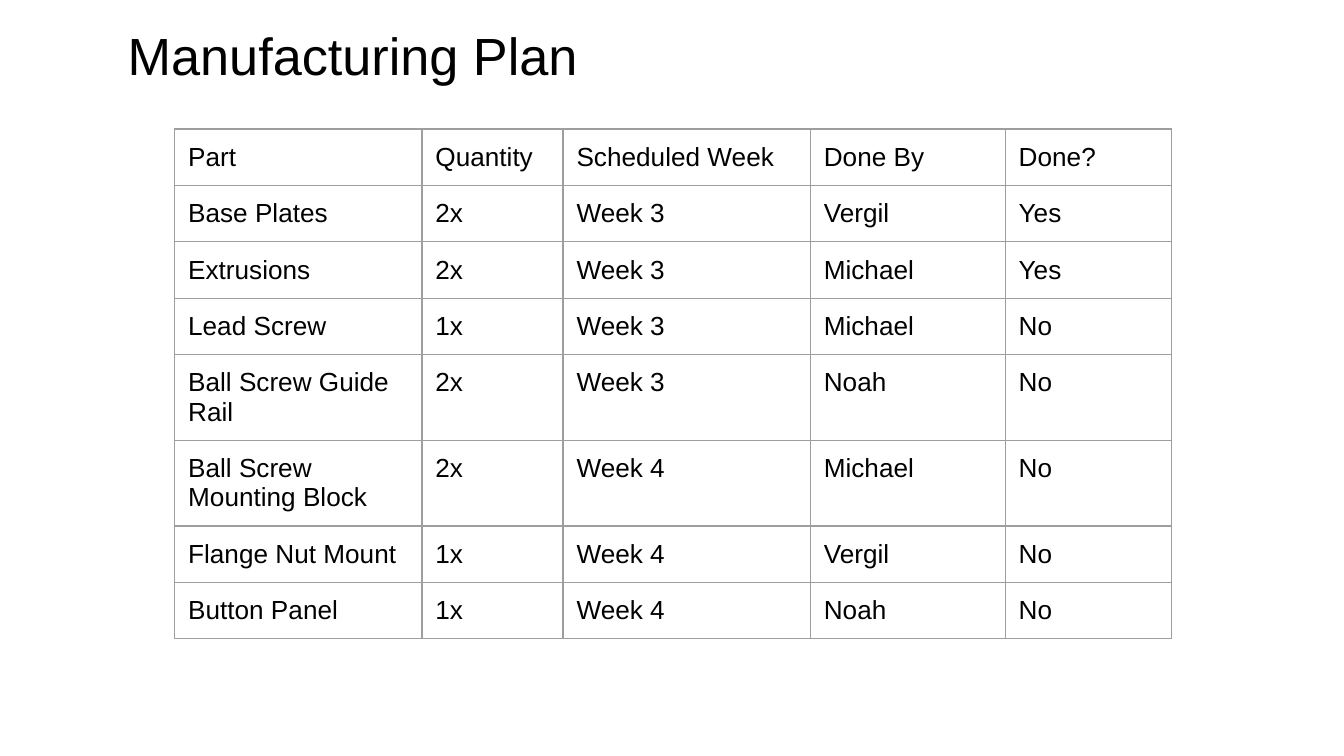
"""Build the manufacturing plan slide with its parts schedule table."""
from typing import NamedTuple

from lxml import etree
from pptx import Presentation
from pptx.dml.color import RGBColor
from pptx.enum.text import MSO_ANCHOR, PP_ALIGN
from pptx.oxml.ns import qn
from pptx.util import Inches, Pt

TOP = MSO_ANCHOR.TOP
LEFT = PP_ALIGN.LEFT
BLACK = RGBColor(0x00, 0x00, 0x00)
GRAY = RGBColor(0x9E, 0x9E, 0x9E)
FONT = "Arial"
SLIDE_WIDTH = Inches(10)
SLIDE_HEIGHT = SLIDE_WIDTH * 9 // 16
INSET = Inches(0.1)
ROW_HEIGHT = Inches(0.42)
COLUMN_WIDTHS = [Inches(width) for width in (1.84, 1.05, 1.84, 1.45, 1.24)]


class PlanRow(NamedTuple):
    part: str
    quantity: str
    week: str
    done_by: str
    done: str


PLAN = [
    PlanRow("Part", "Quantity", "Scheduled Week", "Done By", "Done?"),
    PlanRow("Base Plates", "2x", "Week 3", "Vergil", "Yes"),
    PlanRow("Extrusions", "2x", "Week 3", "Michael", "Yes"),
    PlanRow("Lead Screw", "1x", "Week 3", "Michael", "No"),
    PlanRow("Ball Screw Guide Rail", "2x", "Week 3", "Noah", "No"),
    PlanRow("Ball Screw Mounting Block", "2x", "Week 4", "Michael", "No"),
    PlanRow("Flange Nut Mount", "1x", "Week 4", "Vergil", "No"),
    PlanRow("Button Panel", "1x", "Week 4", "Noah", "No"),
]


def write(frame, text: str, size: int) -> None:
    para = frame.paragraphs[0]
    para.alignment = LEFT
    span = para.add_run()
    span.text = text
    span.font.size = Pt(size)
    span.font.name = FONT
    span.font.bold = False
    span.font.color.rgb = BLACK


def set_insets(box) -> None:
    box.margin_left = box.margin_right = INSET
    box.margin_top = box.margin_bottom = INSET
    box.vertical_anchor = TOP


def add_borders(cell) -> None:
    properties = cell._tc.get_or_add_tcPr()
    for position, side in enumerate(("lnL", "lnR", "lnT", "lnB")):
        line = etree.Element(qn(f"a:{side}"), w=str(Pt(0.75)))
        fill = etree.SubElement(line, qn("a:solidFill"))
        etree.SubElement(fill, qn("a:srgbClr"), val=str(GRAY))
        properties.insert(position, line)


def add_title(page, text: str) -> None:
    title = page.shapes.title
    title.left, title.top = Inches(0.85), Inches(0.07)
    title.width, title.height = Inches(8.3), Inches(0.67)
    set_insets(title.text_frame)
    title.text_frame.word_wrap = True
    write(title.text_frame, text, 28)


def add_plan_table(page, plan: list[PlanRow]) -> None:
    frame = page.shapes.add_table(
        len(plan), len(COLUMN_WIDTHS), Inches(1.3), Inches(0.96),
        sum(COLUMN_WIDTHS), ROW_HEIGHT * len(plan))
    table = frame.table
    table.first_row = table.horz_banding = False
    for column, width in zip(table.columns, COLUMN_WIDTHS):
        column.width = width
    for row, entry in zip(table.rows, plan):
        row.height = ROW_HEIGHT
        for cell, text in zip(row.cells, entry):
            set_insets(cell)
            cell.fill.background()
            add_borders(cell)
            write(cell.text_frame, text, 14)


def main() -> None:
    deck = Presentation()
    deck.slide_width, deck.slide_height = SLIDE_WIDTH, SLIDE_HEIGHT
    page = deck.slides.add_slide(deck.slide_layouts[5])
    add_plan_table(page, PLAN)
    add_title(page, "Manufacturing Plan")
    deck.save("out.pptx")


if __name__ == "__main__":
    main()
